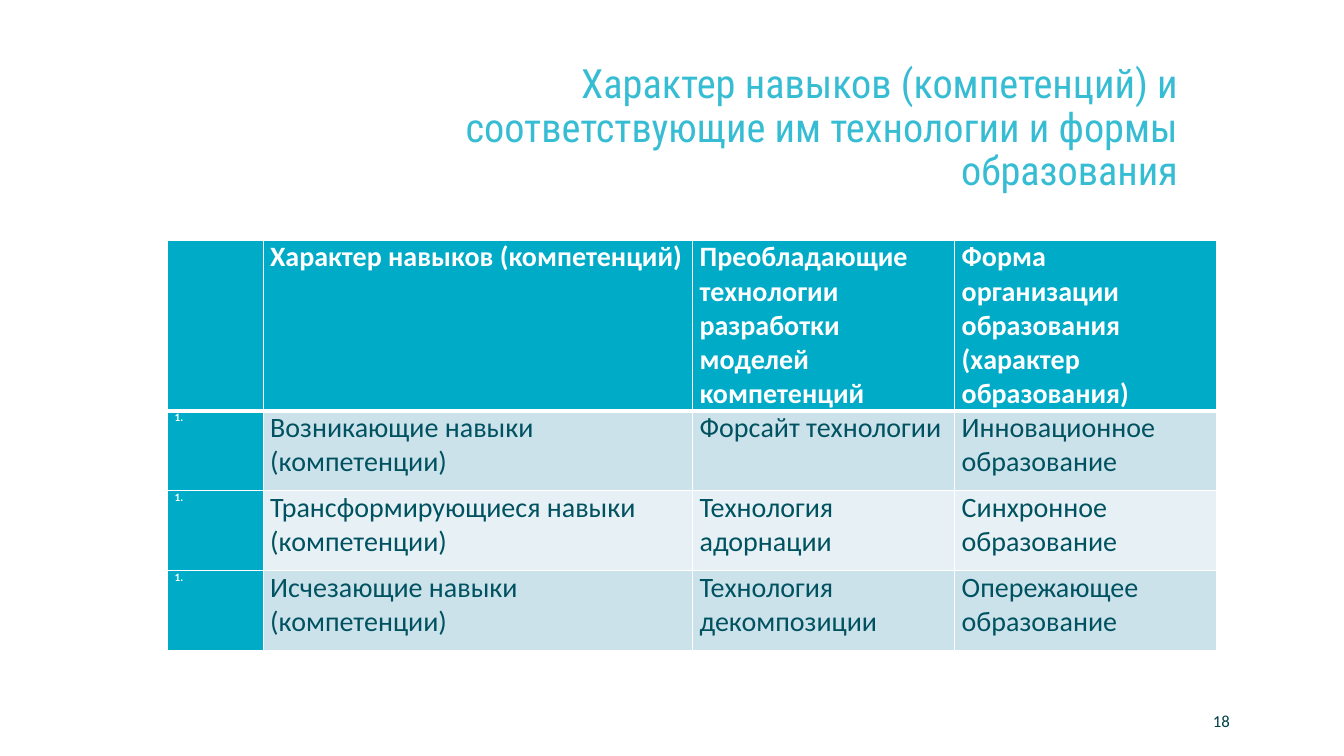
from dataclasses import dataclass

from lxml import etree
from pptx import Presentation
from pptx.dml.color import RGBColor
from pptx.enum.text import MSO_ANCHOR, MSO_AUTO_SIZE, PP_ALIGN
from pptx.oxml.ns import qn
from pptx.util import Pt

RIGHT, LEFT = PP_ALIGN.RIGHT, PP_ALIGN.LEFT
MIDDLE, TOP = MSO_ANCHOR.MIDDLE, MSO_ANCHOR.TOP
NO_AUTOFIT = MSO_AUTO_SIZE.NONE
TITLE_ONLY = 5


@dataclass(frozen=True)
class Theme:
    title_font: str = "Roboto Condensed"
    body_font: str = "Calibri"
    title_color: str = "37BDD3"
    page_color: str = "023F47"
    body_color: str = "005260"
    accent: str = "00ABC7"
    white: str = "FFFFFF"
    bands: tuple = ("CCE2EB", "E7F1F5")
    title_size: float = 28.8
    body_size: float = 20
    page_size: float = 12
    index_size: float = 8


THEME = Theme()
TITLE = "Характер навыков (компетенций) и соответствующие им технологии и формы образования"
COLUMN_WIDTHS = (68.25, 306.75, 187.25, 187.25)
ROW_HEIGHTS = (122, 57, 57, 57)
ROWS = (
    ("", "Характер навыков (компетенций)",
     "Преобладающие технологии разработки моделей компетенций",
     "Форма организации образования (характер образования)"),
    ("1.", "Возникающие навыки (компетенции)", "Форсайт технологии",
     "Инновационное образование"),
    ("1.", "Трансформирующиеся навыки (компетенции)", "Технология адорнации",
     "Синхронное образование"),
    ("1.", "Исчезающие навыки (компетенции)", "Технология декомпозиции",
     "Опережающее образование"),
)


def apply_format(target, values):
    for name, value in values.items():
        setattr(target, name, value)


def write_text(text_frame, text, size, color, font=THEME.body_font, bold=False, **paragraph_format):
    text_frame.text = text
    paragraph = text_frame.paragraphs[0]
    apply_format(paragraph, paragraph_format)
    apply_format(paragraph.font, {"name": font, "size": Pt(size), "bold": bold})
    paragraph.font.color.rgb = RGBColor.from_string(color)


def place(shape, left, top, width, height):
    apply_format(shape, {"left": Pt(left), "top": Pt(top), "width": Pt(width), "height": Pt(height)})


def add_title(slide):
    title = slide.shapes.title
    place(title, 250.5, 63.25, 598.25, 89.25)
    apply_format(title.text_frame, {
        "word_wrap": True, "auto_size": NO_AUTOFIT,
        "vertical_anchor": MIDDLE, "margin_bottom": Pt(35),
    })
    write_text(title.text_frame, TITLE, THEME.title_size, THEME.title_color,
               THEME.title_font, alignment=RIGHT, line_spacing=0.9)


def add_page_number(slide, number):
    box = slide.shapes.add_textbox(Pt(851.75), Pt(500.5), Pt(33.75), Pt(28.75))
    apply_format(box.text_frame, {"word_wrap": True, "vertical_anchor": MIDDLE})
    write_text(box.text_frame, number, THEME.page_size, THEME.page_color, alignment=RIGHT)


def set_borders(cell, widths):
    properties = cell._tc.get_or_add_tcPr()
    for side, width in widths.items():
        line = etree.SubElement(properties, qn(f"a:ln{side}"), w=str(Pt(width)))
        fill = etree.SubElement(line, qn("a:solidFill"))
        etree.SubElement(fill, qn("a:srgbClr"), val=THEME.white)


def fill_cell(cell, text, row, column):
    is_header, is_index = row == 0, column == 0
    on_accent = is_header or is_index
    set_borders(cell, {"L": 1, "R": 1, "T": 3 if row == 1 else 1, "B": 3 if is_header else 1})
    cell.fill.solid()
    background = THEME.accent if on_accent else THEME.bands[(row - 1) % 2]
    cell.fill.fore_color.rgb = RGBColor.from_string(background)
    apply_format(cell, {
        "margin_left": Pt(5), "margin_right": Pt(5),
        "margin_top": 0, "margin_bottom": 0, "vertical_anchor": TOP,
    })
    write_text(cell.text_frame, text,
               THEME.index_size if is_index else THEME.body_size,
               THEME.white if on_accent else THEME.body_color,
               bold=on_accent, alignment=LEFT, space_after=Pt(15))


def add_skills_table(slide):
    frame = slide.shapes.add_table(
        len(ROWS), len(COLUMN_WIDTHS), Pt(119.75), Pt(171.5),
        Pt(sum(COLUMN_WIDTHS)), Pt(sum(ROW_HEIGHTS)))
    table = frame.table
    apply_format(table, {"first_row": False, "horz_banding": False})
    for column, width in zip(table.columns, COLUMN_WIDTHS):
        column.width = Pt(width)
    for row, height in zip(table.rows, ROW_HEIGHTS):
        row.height = Pt(height)
    for row, texts in enumerate(ROWS):
        for column, text in enumerate(texts):
            fill_cell(table.cell(row, column), text, row, column)


def main():
    presentation = Presentation()
    apply_format(presentation, {"slide_width": Pt(960), "slide_height": Pt(540)})
    slide = presentation.slides.add_slide(presentation.slide_layouts[TITLE_ONLY])
    add_title(slide)
    add_page_number(slide, "18")
    add_skills_table(slide)
    presentation.save("out.pptx")


if __name__ == "__main__":
    main()
